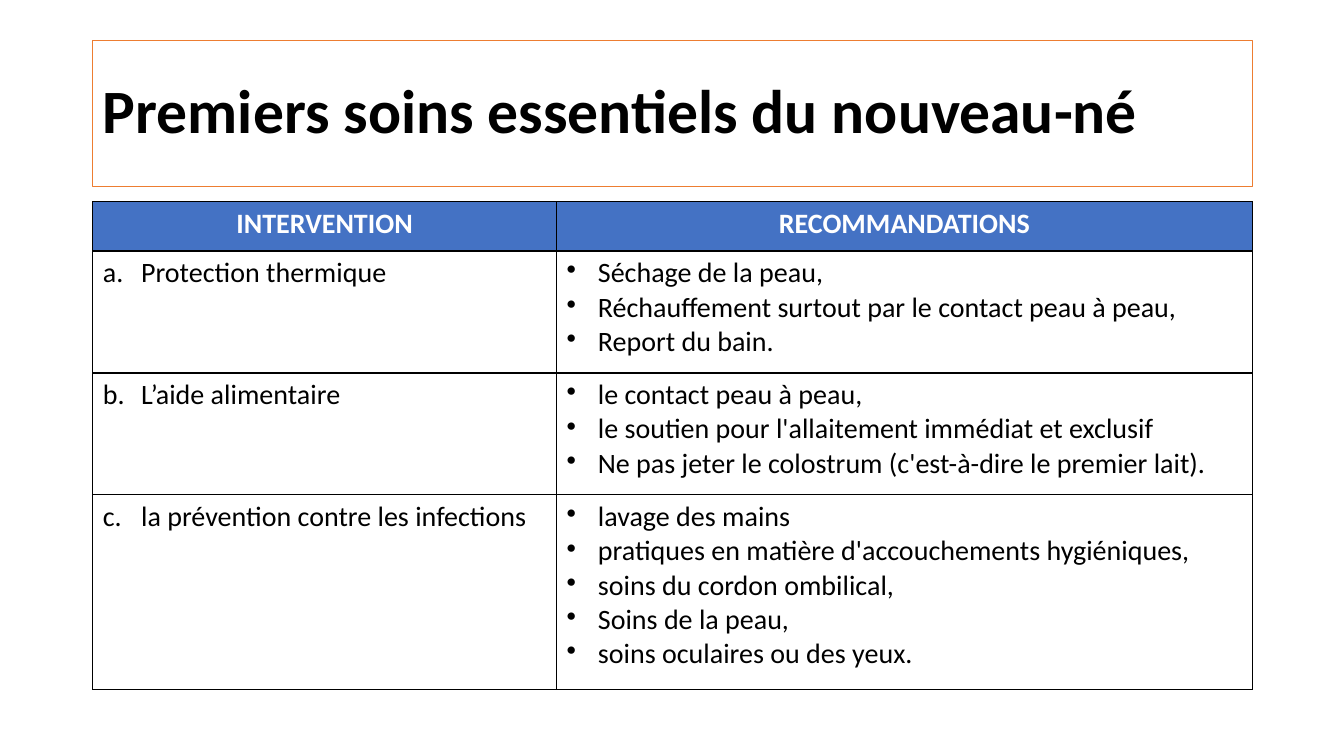
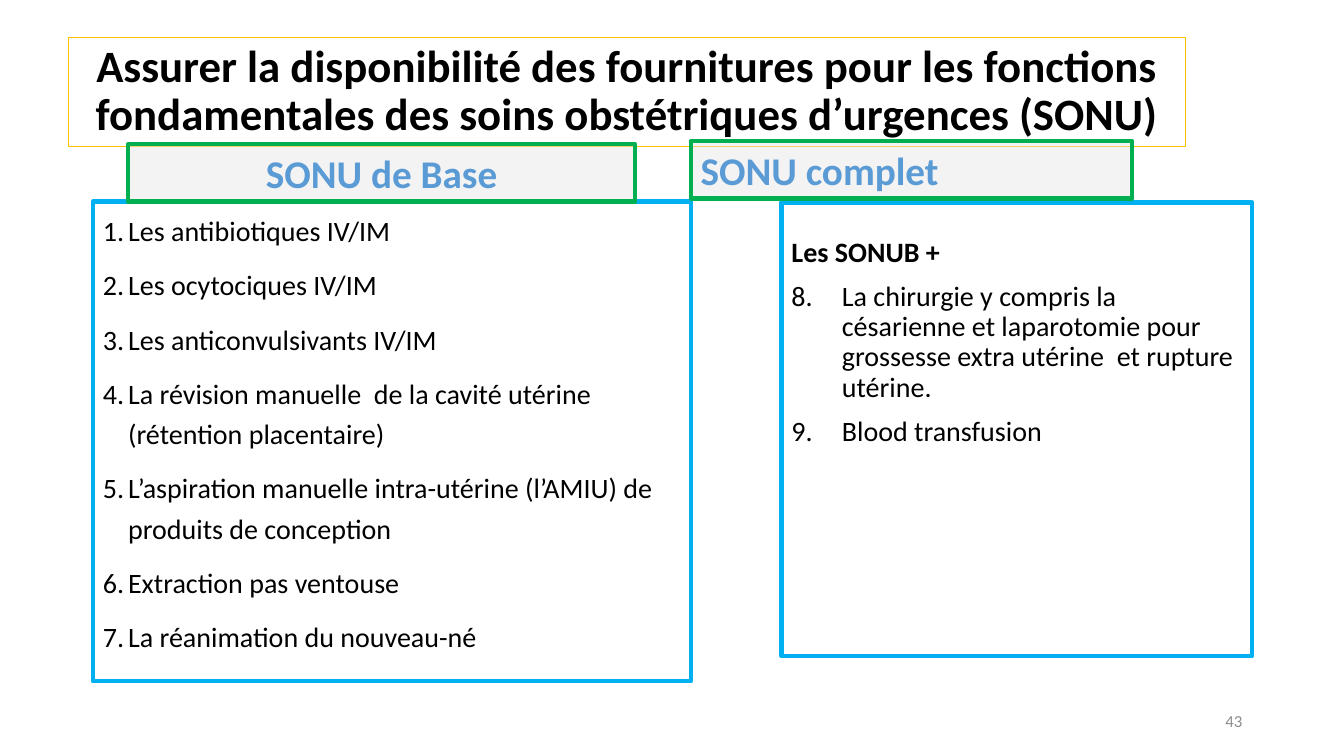
from dataclasses import dataclass

from lxml import etree
from pptx import Presentation
from pptx.dml.color import RGBColor
from pptx.enum.shapes import MSO_SHAPE as Preset
from pptx.enum.text import MSO_ANCHOR as Anchor, MSO_AUTO_SIZE as AutoSize, PP_ALIGN as Align
from pptx.oxml.ns import qn
from pptx.util import Inches, Pt


@dataclass(frozen=True)
class Theme:
    font: str = "Calibri"
    black: str = "000000"
    white: str = "FFFFFF"
    header: str = "4472C4"
    orange: str = "ED7D31"
    gold: str = "FFC000"
    sky: str = "00B0F0"
    green: str = "00B050"
    band: str = "E7E6E6"
    band_text: str = "5B9BD5"
    muted: str = "8C8C8C"
    title_size: int = 44
    long_title_size: int = 32
    band_size: int = 28
    body_size: int = 20
    note_size: int = 12
    thin: float = 0.75
    thick: float = 3


THEME = Theme()

CARE_ROWS = [
    ("Protection thermique", [
        "Séchage de la peau,",
        "Réchauffement surtout par le contact peau à peau,",
        "Report du bain.",
    ]),
    ("L’aide alimentaire", [
        "le contact peau à peau,",
        "le soutien pour l'allaitement immédiat et exclusif",
        "Ne pas jeter le colostrum (c'est-à-dire le premier lait).",
    ]),
    ("la prévention contre les infections", [
        "lavage des mains",
        "pratiques en matière d'accouchements hygiéniques,",
        "soins du cordon ombilical,",
        "Soins de la peau,",
        "soins oculaires ou des yeux.",
    ]),
]
BASIC_CARE = [
    "Les antibiotiques IV/IM",
    "Les ocytociques IV/IM",
    "Les anticonvulsivants IV/IM",
    "La révision manuelle  de la cavité utérine (rétention placentaire)",
    "L’aspiration manuelle intra-utérine (l’AMIU) de produits de conception",
    "Extraction pas ventouse",
    "La réanimation du nouveau-né",
]
FULL_CARE = [
    "La chirurgie y compris la césarienne et laparotomie pour grossesse extra utérine  et rupture utérine.",
    "Blood transfusion",
]


def rgb(color):
    return RGBColor.from_string(color)


def place(shape, left, top, width, height):
    shape.left, shape.top = Inches(left), Inches(top)
    shape.width, shape.height = Inches(width), Inches(height)


def outline(shape, color, width):
    shape.line.color.rgb = rgb(color)
    shape.line.width = Pt(width)


def paint(shape, color):
    shape.fill.solid()
    shape.fill.fore_color.rgb = rgb(color)


def set_marker(para, kind, indent=0, **attributes):
    properties = para._p.get_or_add_pPr()
    properties.set("marL", str(Inches(indent)))
    properties.set("indent", str(-Inches(indent)))
    etree.SubElement(properties, qn(f"a:{kind}"), attributes)


def number(para, indent, start, scheme="arabicPeriod"):
    set_marker(para, "buAutoNum", indent, type=scheme, startAt=str(start))


def bullet(para, indent):
    set_marker(para, "buChar", indent, char="•")


def style(para, size=THEME.body_size, color=THEME.black, bold=False,
          align=Align.LEFT, spacing=1.0, before=0):
    para.alignment = align
    para.line_spacing = spacing
    para.space_before = Pt(before)
    font = para.font
    font.name, font.size, font.bold = THEME.font, Pt(size), bold
    font.color.rgb = rgb(color)


def next_para(frame, text, first):
    para = frame.paragraphs[0] if first else frame.add_paragraph()
    para.text = text
    return para


def prepare_frame(shape, anchor, top=0.05):
    frame = shape.text_frame
    frame.word_wrap = True
    frame.auto_size = AutoSize.NONE
    frame.vertical_anchor = anchor
    frame.margin_left = frame.margin_right = Inches(0.1)
    frame.margin_top, frame.margin_bottom = Inches(top), Inches(0.05)
    return frame


def set_title(slide, text, area, size, border, align=Align.LEFT):
    title = slide.shapes.title
    place(title, *area)
    outline(title, border, THEME.thin)
    para = next_para(prepare_frame(title, Anchor.MIDDLE), text, True)
    style(para, size, bold=True, align=align, spacing=0.9)


def fill_list(box, area, items, indent, spacing, start=1, heading=None, top=0.05):
    place(box, *area)
    paint(box, THEME.white)
    outline(box, THEME.sky, THEME.thick)
    frame = prepare_frame(box, Anchor.TOP, top)
    if heading:
        para = next_para(frame, heading, True)
        set_marker(para, "buNone")
        style(para, bold=True, spacing=spacing)
    for index, item in enumerate(items):
        first = index == 0 and not heading
        para = next_para(frame, item, first)
        number(para, indent, start)
        style(para, spacing=spacing, before=0 if first else 10)


def add_band(slide, text, area, opacity, align):
    band = slide.shapes.add_shape(Preset.RECTANGLE, *map(Inches, area))
    band.shadow.inherit = False
    paint(band, THEME.band)
    color = band._element.spPr.find(qn("a:solidFill"))[0]
    etree.SubElement(color, qn("a:alpha"), val=str(opacity * 1000))
    outline(band, THEME.green, THEME.thick)
    para = next_para(prepare_frame(band, Anchor.TOP), text, True)
    style(para, THEME.band_size, THEME.band_text, True, align)


def add_page_number(slide, text):
    box = slide.shapes.add_textbox(*map(Inches, (9.42, 6.95, 3, 0.4)))
    para = next_para(prepare_frame(box, Anchor.MIDDLE), text, True)
    style(para, THEME.note_size, THEME.muted, align=Align.RIGHT)


def format_cell(cell, fill):
    properties = cell._tc.get_or_add_tcPr()
    for side in ("lnL", "lnR", "lnT", "lnB"):
        border = etree.SubElement(properties, qn(f"a:{side}"), w=str(Pt(1)))
        solid = etree.SubElement(border, qn("a:solidFill"))
        etree.SubElement(solid, qn("a:srgbClr"), val=THEME.black)
    if fill:
        paint(cell, fill)
    else:
        cell.fill.background()


def add_care_table(slide):
    columns, heights = (4.6, 6.9), (0.49, 1.21, 1.21, 1.93)
    area = (0.92, 2, sum(columns), sum(heights))
    table = slide.shapes.add_table(len(heights), len(columns), *map(Inches, area)).table
    table.horz_banding = False
    for column, width in zip(table.columns, columns):
        column.width = Inches(width)
    for row, height in zip(table.rows, heights):
        row.height = Inches(height)
    for column, text in enumerate(("INTERVENTION", "RECOMMANDATIONS")):
        cell = table.cell(0, column)
        format_cell(cell, THEME.header)
        para = next_para(cell.text_frame, text, True)
        style(para, color=THEME.white, bold=True, align=Align.CENTER)
    for row, (intervention, advice) in enumerate(CARE_ROWS, 1):
        name_cell, advice_cell = table.cell(row, 0), table.cell(row, 1)
        format_cell(name_cell, None)
        format_cell(advice_cell, None)
        para = next_para(name_cell.text_frame, intervention, True)
        number(para, 0.38, row, "alphaLcPeriod")
        style(para)
        for index, text in enumerate(advice):
            para = next_para(advice_cell.text_frame, text, index == 0)
            bullet(para, 0.31)
            style(para)


def build_newborn_care(deck):
    slide = deck.slides.add_slide(deck.slide_layouts[5])
    set_title(slide, "Premiers soins essentiels du nouveau-né",
              (0.92, 0.4, 11.5, 1.45), THEME.title_size, THEME.orange)
    add_care_table(slide)


def build_emergency_supplies(deck):
    slide = deck.slides.add_slide(deck.slide_layouts[3])
    set_title(slide,
              "Assurer la disponibilité des fournitures pour les fonctions "
              "fondamentales des soins obstétriques d’urgences (SONU)",
              (0.68, 0.37, 11.08, 1.08), THEME.long_title_size, THEME.gold, Align.CENTER)
    fill_list(slide.placeholders[1], (0.92, 2, 5.93, 4.76), BASIC_CARE, 0.25, 1.2)
    fill_list(slide.placeholders[2], (7.75, 2.01, 4.67, 4.5), FULL_CARE, 0.5, 0.9,
              start=8, heading="Les SONUB +", top=0.35)
    add_band(slide, "SONU de Base", (1.27, 1.43, 5.03, 0.57), 48, Align.CENTER)
    add_band(slide, "SONU complet", (6.85, 1.4, 4.38, 0.57), 45, Align.LEFT)
    add_page_number(slide, "43")


def main():
    deck = Presentation()
    deck.slide_width, deck.slide_height = Inches(13.33), Inches(7.5)
    build_newborn_care(deck)
    build_emergency_supplies(deck)
    deck.save("out.pptx")


if __name__ == "__main__":
    main()
